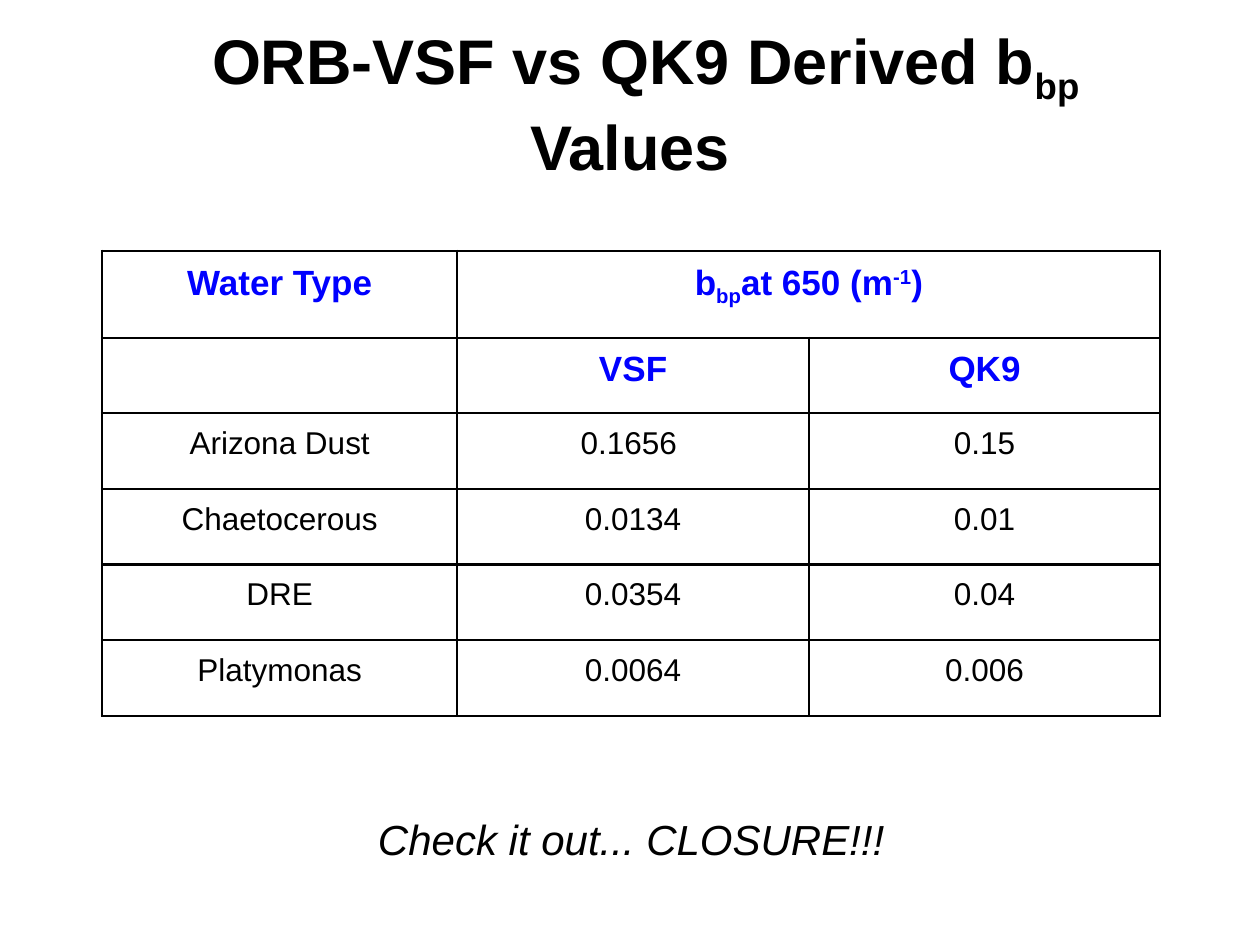
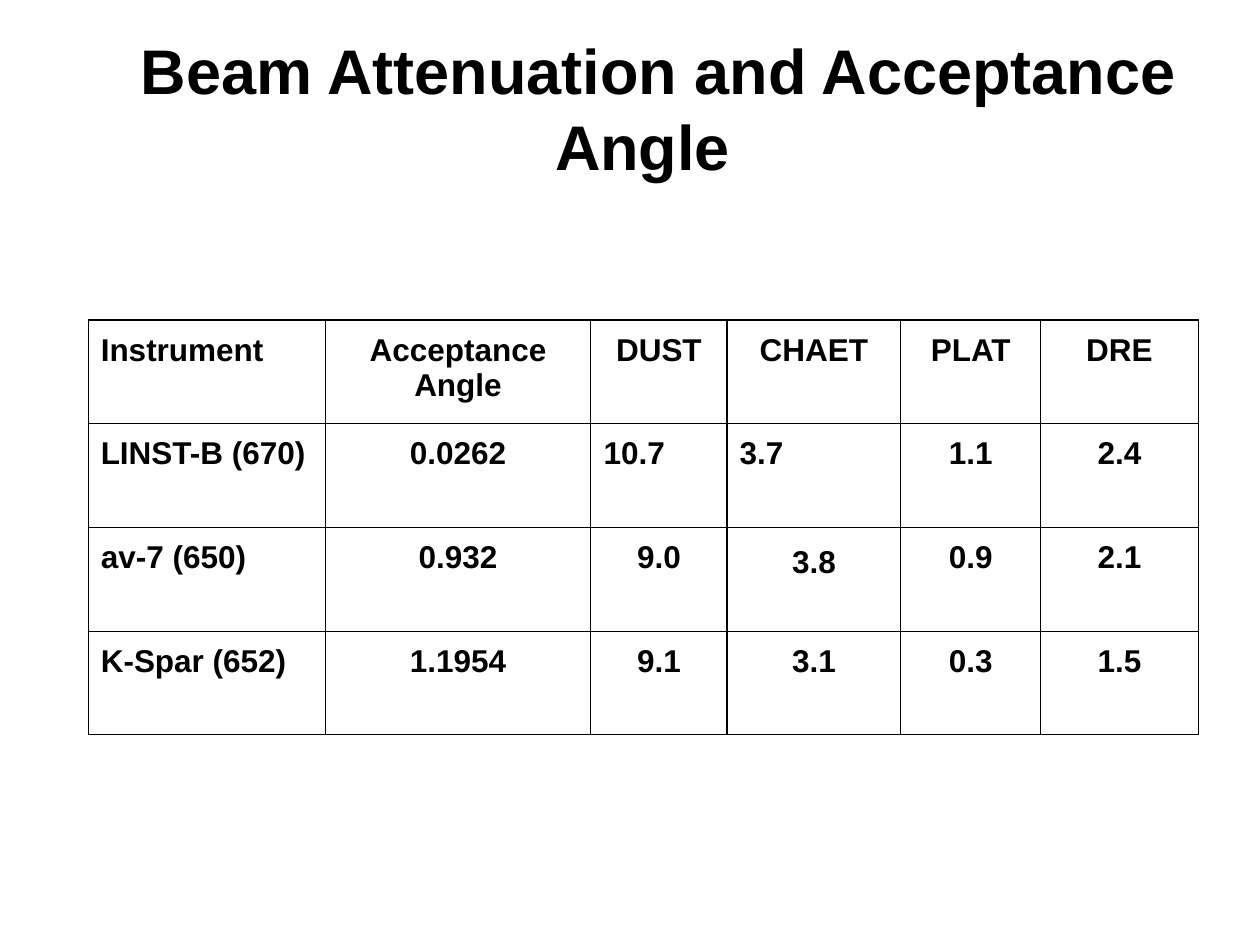
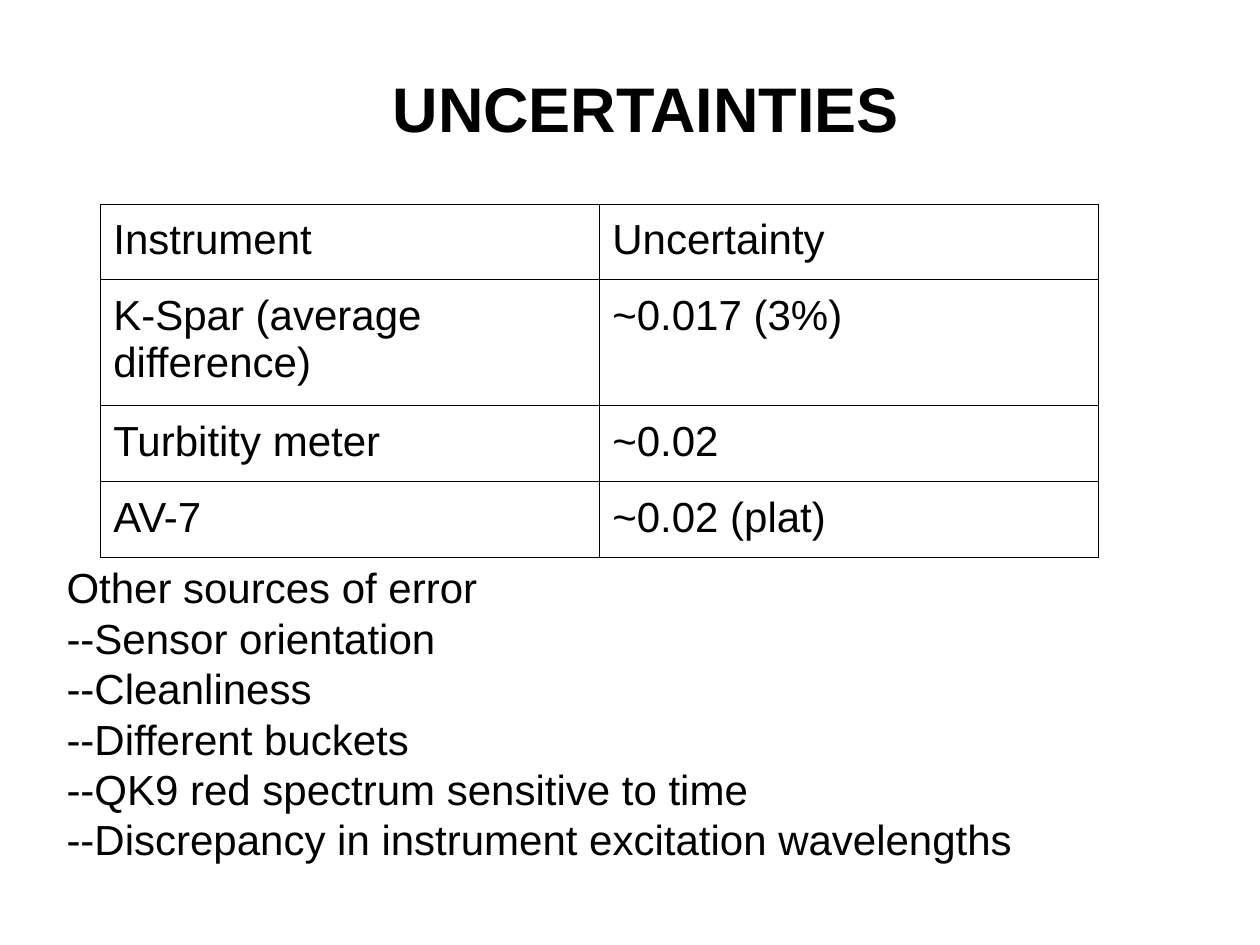
import pptx
import pptx.util
import pptx.dml.color
import pptx.enum.text
import pptx.oxml
import pptx.oxml.ns

BLACK = pptx.dml.color.RGBColor(0x00, 0x00, 0x00)
BLUE = pptx.dml.color.RGBColor(0x00, 0x00, 0xFF)
WHITE = pptx.dml.color.RGBColor(0xFF, 0xFF, 0xFF)
LEFT = pptx.enum.text.PP_ALIGN.LEFT
MID = pptx.enum.text.PP_ALIGN.CENTER
FONT = "Arial"
COLS, ROWS = 100, 75
SUB, SUP = -25000, 30000


def write(frame, text, size=24, color=BLACK, bold=False, slant=False,
          align=LEFT, indent=0, space=None):
    lines = text if isinstance(text, list) else [text]
    for num, line in enumerate(lines):
        para = frame.add_paragraph() if num else frame.paragraphs[0]
        para.alignment = align
        if space:
            para.line_spacing = space
        if indent:
            props = para._p.get_or_add_pPr()
            props.set("marL", "0")
            props.set("indent", str(indent))
        parts = line if isinstance(line, tuple) else ((line, 0),)
        for words, base in parts:
            run = para.add_run()
            run.text = words
            font = run.font
            font.name, font.size = FONT, pptx.util.Pt(size)
            font.bold, font.italic = bold, slant
            font.color.rgb = color
            if base:
                run._r.get_or_add_rPr().set("baseline", str(base))


def edge(cell, width):
    props = cell._tc.get_or_add_tcPr()
    for num, side in enumerate("LRTB"):
        props.insert(num, pptx.oxml.parse_xml(
            f'<a:ln{side} {pptx.oxml.ns.nsdecls("a")} w="{pptx.util.Pt(width)}">'
            f'<a:solidFill><a:srgbClr val="{BLACK}"/></a:solidFill></a:ln{side}>'))


class Deck:
    def __init__(self):
        self.show = pptx.Presentation()
        self.show.slide_width = pptx.util.Inches(10)
        self.show.slide_height = pptx.util.Inches(7.5)
        self.slide = None

    def wide(self, cols):
        return round(self.show.slide_width * cols / COLS)

    def tall(self, rows):
        return round(self.show.slide_height * rows / ROWS)

    def page(self):
        self.slide = self.show.slides.add_slide(self.show.slide_layouts[6])
        fill = self.slide.background.fill
        fill.solid()
        fill.fore_color.rgb = WHITE

    def pad(self, frame):
        for side in ("left", "right", "top", "bottom"):
            setattr(frame, f"margin_{side}", self.wide(1))

    def note(self, text, left, top, width, height, low=False, **style):
        box = self.slide.shapes.add_textbox(
            self.wide(left), self.tall(top), self.wide(width), self.tall(height))
        frame = box.text_frame
        frame.word_wrap = True
        self.pad(frame)
        anchor = pptx.enum.text.MSO_ANCHOR
        frame.vertical_anchor = anchor.BOTTOM if low else anchor.TOP
        write(frame, text, **style)

    def title(self, text, left=5, height=12.5):
        self.note(text, left, 3, 90, height, low=True, size=36, bold=True,
                  align=MID, indent=self.wide(2.5))

    def table(self, data, left, top, cols, rows, line, look):
        grid = self.slide.shapes.add_table(
            len(rows), len(cols), self.wide(left), self.tall(top),
            self.wide(sum(cols)), self.tall(sum(rows))).table
        grid.first_row = grid.horz_banding = False
        for col, width in zip(grid.columns, cols):
            col.width = self.wide(width)
        for row, height in zip(grid.rows, rows):
            row.height = self.tall(height)
        for r, items in enumerate(data):
            for c, text in enumerate(items):
                cell = grid.cell(r, c)
                cell.fill.background()
                self.pad(cell)
                edge(cell, line)
                if text:
                    write(cell.text_frame, text, **look(r, c))
        return grid


def water(row, col):
    if row < 2:
        return dict(size=20, color=BLUE, bold=True, align=MID)
    return dict(size=18, align=MID)


def beam(row, col):
    flush = col == 0 or (row == 1 and col in (2, 3))
    return dict(size=18, bold=True, align=LEFT if flush else MID,
                space=1.15 if (row, col) == (2, 3) else None)


def plain(row, col):
    return dict(size=24)


def main():
    deck = Deck()

    deck.page()
    deck.title((("ORB-VSF vs QK9 Derived b", 0), ("bp", SUB), (" Values", 0)))
    unit = (("b", 0), ("bp", SUB), ("at 650 (m", 0), ("-1", SUP), (")", 0))
    grid = deck.table([
        ["Water Type", unit, ""],
        ["", "VSF", "QK9"],
        ["Arizona Dust", "0.1656 ", "0.15"],
        ["Chaetocerous", "0.0134", "0.01"],
        ["DRE", "0.0354", "0.04"],
        ["Platymonas", "0.0064", "0.006"],
    ], 8.1, 19.9, [28.2, 27.9, 27.9], [6.9] + [6] * 5, 1.5, water)
    grid.cell(0, 1).merge(grid.cell(0, 2))
    deck.note("Check it out... CLOSURE!!!", 8.1, 63.6, 84, 12.5,
              slant=True, align=MID)

    deck.page()
    deck.title("Beam Attenuation and Acceptance Angle", left=6)
    deck.table([
        ["Instrument", "Acceptance Angle", "DUST", "CHAET", "PLAT", "DRE"],
        ["LINST-B (670)", "0.0262", "10.7", "3.7", "1.1", "2.4"],
        ["av-7 (650)", "0.932", "9.0", "3.8", "0.9", "2.1"],
        ["K-Spar (652)", "1.1954", "9.1", "3.1", "0.3", "1.5"],
    ], 7, 25.4, [18.8, 21.1, 10.8, 13.8, 11.1, 12.5], [8.23] * 4, 0.75, beam)

    deck.page()
    deck.title("UNCERTAINTIES", height=9.5)
    deck.table([
        ["Instrument", "Uncertainty"],
        ["K-Spar (average difference)", "~0.017 (3%)"],
        ["Turbitity meter", "~0.02"],
        ["AV-7", "~0.02 (plat)"],
    ], 8, 16.2, [39.6] * 2, [5.7, 9.4, 5.7, 5.7], 0.75, plain)
    deck.note([
        "Other sources of error",
        "--Sensor orientation",
        "--Cleanliness",
        "--Different buckets",
        "--QK9 red spectrum sensitive to time",
        "--Discrepancy in instrument excitation wavelengths",
    ], 4.3, 43.6, 90, 28)

    deck.show.save("out.pptx")


if __name__ == "__main__":
    main()
